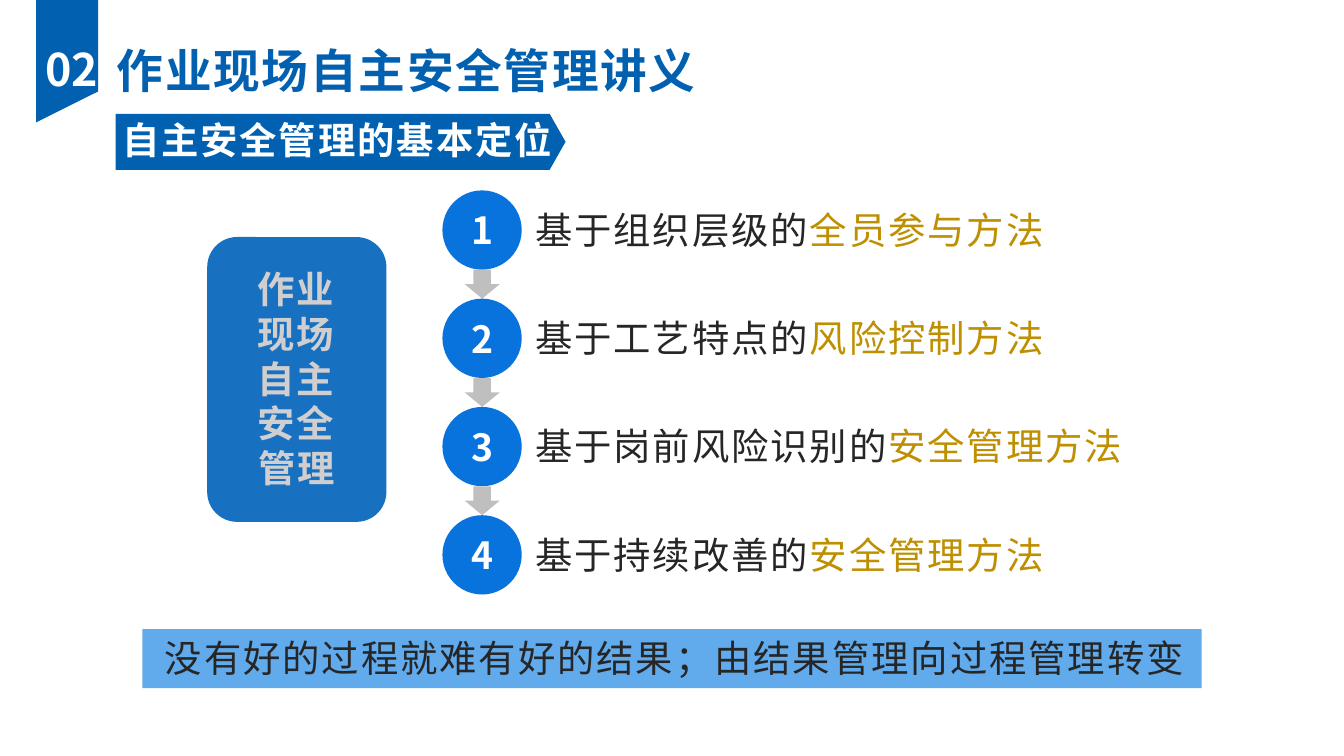
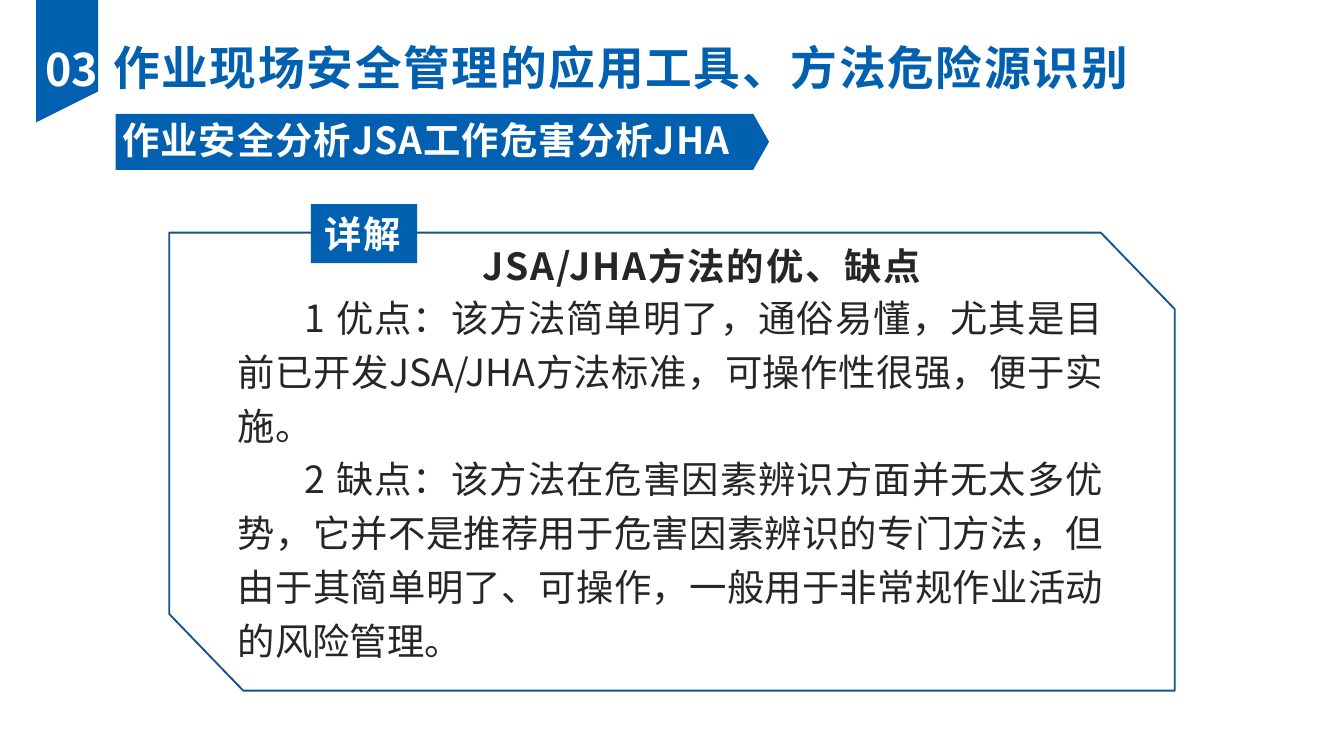
from dataclasses import dataclass
from lxml import etree
from pptx import Presentation
from pptx.dml.color import RGBColor
from pptx.enum.shapes import MSO_SHAPE
from pptx.enum.text import MSO_ANCHOR, MSO_AUTO_SIZE, PP_ALIGN
from pptx.oxml.ns import qn
from pptx.util import Pt

RECT, ROUND, OVAL = MSO_SHAPE.RECTANGLE, MSO_SHAPE.ROUNDED_RECTANGLE, MSO_SHAPE.OVAL
PLATE, ARROW = MSO_SHAPE.PENTAGON, MSO_SHAPE.DOWN_ARROW
TOP, MID = MSO_ANCHOR.TOP, MSO_ANCHOR.MIDDLE
LEFT, CENTER, FULL = PP_ALIGN.LEFT, PP_ALIGN.CENTER, PP_ALIGN.JUSTIFY
NO_FIT = MSO_AUTO_SIZE.NONE

FONT = "Noto Sans CJK SC"
HEX = {
    "navy": "0160AF", "blue": "0973DD", "block": "1770C0", "sky": "61AAEC",
    "edge": "11538E", "gray": "BFBFBF", "pale": "D0CECE", "ink": "262626",
    "gold": "BE8F00", "white": "FFFFFF",
}
STEP, DISC = 58, 42.5


@dataclass(frozen=True)
class Box:
    x: float
    y: float
    w: float
    h: float

    def place(self) -> tuple:
        return Pt(self.x), Pt(self.y), Pt(self.w), Pt(self.h)


@dataclass(frozen=True)
class Span:
    text: str
    tint: str = "ink"
    size: float = 20
    bold: bool = False
    space: float = 1


@dataclass(frozen=True)
class Style:
    align: int = LEFT
    anchor: int = TOP
    wrap: bool = False
    lead: float = 1.2
    after: float = 0
    indent: float = 0
    inset: float = 7.2


@dataclass(frozen=True)
class Head:
    num: str
    title: Span
    spot: Box
    label: Span
    plate: float


def color(name: str) -> RGBColor:
    return RGBColor.from_string(HEX[name])


def write(shape, lines: list, style: Style) -> None:
    frame = shape.text_frame
    frame.auto_size = NO_FIT
    frame.word_wrap = style.wrap
    frame.vertical_anchor = style.anchor
    frame.margin_left = Pt(style.inset)
    frame.margin_right = Pt(7.2)
    frame.margin_top = frame.margin_bottom = Pt(3.6)
    for i, line in enumerate(lines):
        para = frame.paragraphs[0] if i == 0 else frame.add_paragraph()
        para.alignment = style.align
        para.line_spacing = Pt(line[0].size * style.lead)
        para.space_before = Pt(0)
        para.space_after = Pt(style.after)
        props = para._p.get_or_add_pPr()
        props.set("marL", "0")
        props.set("indent", str(Pt(style.indent)))
        etree.SubElement(props, qn("a:buNone"))
        for span in line:
            run = para.add_run()
            run.text = span.text
            run.font.size = Pt(span.size)
            run.font.bold = span.bold
            run.font.color.rgb = color(span.tint)
            run.font.name = FONT
            mark = run._r.get_or_add_rPr()
            mark.set("spc", str(round(span.space * 100)))
            etree.SubElement(mark, qn("a:ea")).set("typeface", FONT)


def paint(shape, fill: str, line: str = ""):
    shape.shadow.inherit = False
    shape.fill.solid()
    shape.fill.fore_color.rgb = color(fill)
    if line:
        shape.line.color.rgb = color(line)
        shape.line.width = Pt(1)
    else:
        shape.line.fill.background()
    return shape


def draw(slide, kind: int, box: Box, fill: str):
    return paint(slide.shapes.add_shape(kind, *box.place()), fill)


def trace(slide, points: list, fill: str, line: str = ""):
    ends = [(Pt(x), Pt(y)) for x, y in points]
    form = slide.shapes.build_freeform(*ends[0])
    form.add_line_segments(ends[1:], close=True)
    return paint(form.convert_to_shape(), fill, line)


def note(slide, box: Box, line: list, style: Style) -> None:
    write(slide.shapes.add_textbox(*box.place()), [line], style)


def fill_in(slide, index: int, box: Box, lines: list, style: Style) -> None:
    holder = slide.placeholders[index]
    holder.left, holder.top, holder.width, holder.height = box.place()
    write(holder, lines, style)
    slide.shapes.element.append(holder.element)


def start(deck, head: Head):
    slide = deck.slides.add_slide(deck.slide_layouts[1])
    fill_in(slide, 0, head.spot, [[head.title]], Style(CENTER))
    trace(slide, [(19.4, 0), (52.6, 0), (52.6, 49), (19.4, 65.5)], "navy")
    note(slide, Box(13, 18.7, 51, 36), [Span(head.num, "white", 24, True, 0)],
         Style(CENTER, wrap=True))
    plate = draw(slide, PLATE, Box(62, 61, head.plate, 30), "navy")
    plate.adjustments[0] = 0.283
    note(slide, Box(58.3, 59, head.plate, 31.7), [head.label], Style())
    return slide


def methods(deck) -> None:
    slide = start(deck, Head(
        "02", Span("作业现场自主安全管理讲义", "navy", 25, True),
        Box(54.7, 18.7, 326, 37.4),
        Span("自主安全管理的基本定位", "white", bold=True), 241))
    items = [
        ("基于组织层级的", "全员参与方法"),
        ("基于工艺特点的", "风险控制方法"),
        ("基于岗前风险识别的", "安全管理方法"),
        ("基于持续改善的", "安全管理方法"),
    ]
    for i in range(len(items)):
        top = 102 + i * STEP
        disc = draw(slide, OVAL, Box(237, top, DISC, DISC), "blue")
        write(disc, [[Span(str(i + 1), "white", bold=True, space=0)]], Style(CENTER, MID))
        if i < len(items) - 1:
            draw(slide, ARROW, Box(249, top + DISC, 18.7, STEP - DISC), "gray")
    draw(slide, ROUND, Box(111, 127, 96, 152.6), "block")
    note(slide, Box(129.6, 139, 59, 128),
         [Span("作业现场自主安全管理", "pale", bold=True)], Style(CENTER, wrap=True))
    lines = [[Span(base), Span(goal, "gold")] for base, goal in items]
    fill_in(slide, 1, Box(279.5, 107.3, 330, 206), lines, Style(after=STEP - 24))
    strip = draw(slide, RECT, Box(76.3, 337, 567.4, 31.7), "sky")
    write(strip, [[Span("没有好的过程就难有好的结果；由结果管理向过程管理转变")]],
          Style(inset=12))


def review(deck) -> None:
    slide = start(deck, Head(
        "03", Span("作业现场安全管理的应用工具、方法危险源识别", "navy", 25, True),
        Box(52.6, 17.3, 560, 37.4),
        Span("作业安全分析JSA工作危害分析JHA", "white", bold=True, space=0.5), 350))
    trace(slide, [(90.7, 124.6), (589.7, 124.6), (629.3, 165.6), (629.3, 370),
                  (130.3, 370), (90.7, 329)], "white", "edge")
    note(slide, Box(251.3, 126.7, 255.6, 31.7),
         [Span("JSA/JHA方法的优、缺点", bold=True)], Style())
    texts = [
        "1 优点：该方法简单明了，通俗易懂，尤其是目前已开发JSA/JHA方法标准，"
        "可操作性很强，便于实施。",
        "2 缺点：该方法在危害因素辨识方面并无太多优势，它并不是推荐用于危害因素辨识的专门方法，"
        "但由于其简单明了、可操作，一般用于非常规作业活动的风险管理。",
    ]
    fill_in(slide, 1, Box(120.2, 149.8, 478, 211), [[Span(t, space=0)] for t in texts],
            Style(FULL, wrap=True, lead=1.44, indent=36))
    tag = draw(slide, RECT, Box(166.5, 109.4, 57, 31.7), "navy")
    write(tag, [[Span("详解", "white", bold=True)]], Style())


def main() -> None:
    deck = Presentation()
    deck.slide_width, deck.slide_height = Pt(720), Pt(405)
    methods(deck)
    review(deck)
    deck.save("out.pptx")


if __name__ == "__main__":
    main()
